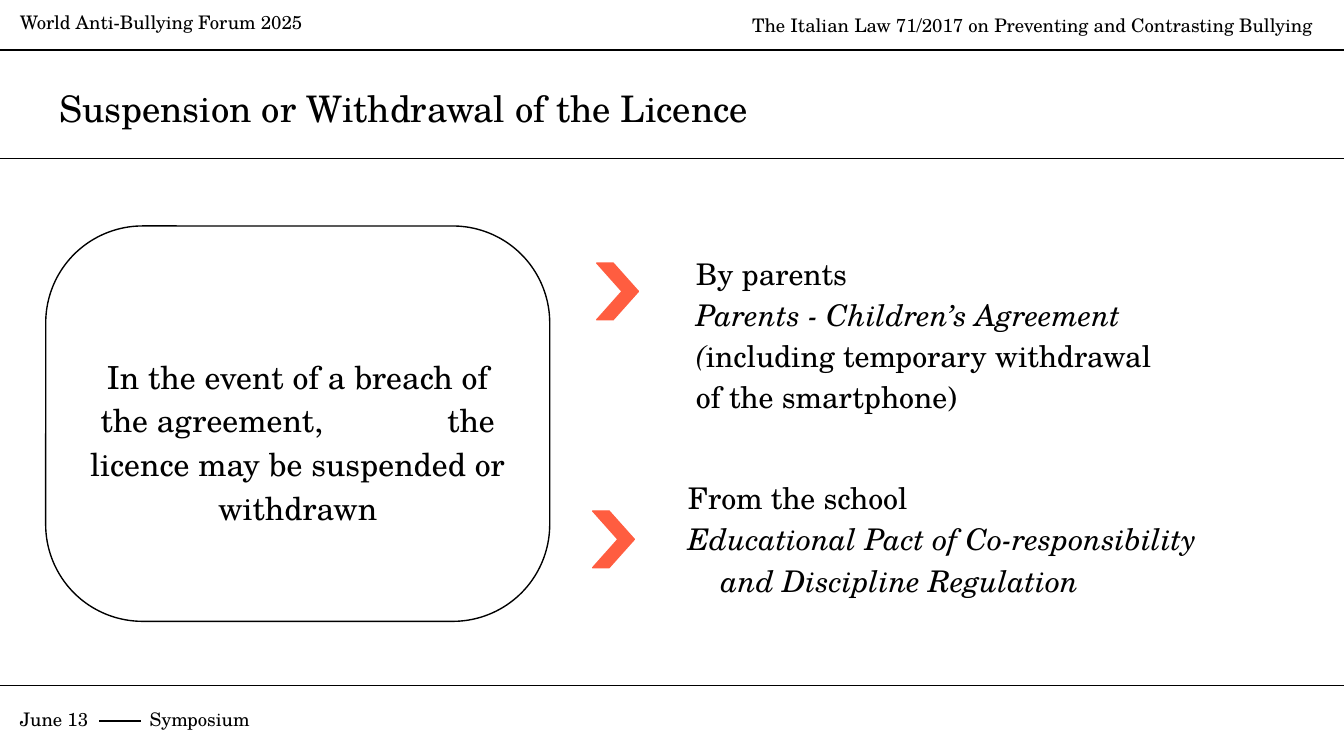
from lxml.etree import SubElement
from pptx import Presentation
from pptx.dml.color import RGBColor
from pptx.enum.shapes import MSO_CONNECTOR, MSO_SHAPE
from pptx.enum.text import MSO_ANCHOR, MSO_AUTO_SIZE, PP_ALIGN
from pptx.oxml.ns import qn
from pptx.util import Inches, Pt

BLACK = RGBColor(0x00, 0x00, 0x00)
CORAL = RGBColor(0xFF, 0x5D, 0x40)
FONT = "TeX Gyre Schola"
WIDTH = Inches(10)
HEIGHT = WIDTH * 9 // 16
COLUMN, ROW = WIDTH / 100, HEIGHT / 100
FRAME = {
    "word_wrap": True,
    "auto_size": MSO_AUTO_SIZE.NONE,
    "vertical_anchor": MSO_ANCHOR.TOP,
    "margin_left": Inches(0.1),
    "margin_top": Inches(0.1),
    "margin_right": Inches(0.1),
    "margin_bottom": Inches(0.1),
}


def apply_format(target, values):
    """Set every attribute named in a dict of format values."""
    for name, value in values.items():
        setattr(target, name, value)


def grid(left, top, width, height):
    """Turn columns and rows into slide lengths."""
    return [round(n) for n in (left * COLUMN, top * ROW, width * COLUMN, height * ROW)]


def write(shape, lines, size, para_format=None, frame_format=None):
    """Write lines, each a list of (text, italic) spans, one per paragraph."""
    frame = shape.text_frame
    apply_format(frame, FRAME | (frame_format or {}))
    for number, spans in enumerate(lines):
        para = frame.add_paragraph() if number else frame.paragraphs[0]
        apply_format(para, {"alignment": PP_ALIGN.LEFT} | (para_format or {}))
        for text, italic in spans:
            span = para.add_run()
            span.text = text
            apply_format(span.font, {"name": FONT, "size": Pt(size), "italic": italic})
            span.font.color.rgb = BLACK
    return frame.paragraphs


def add_tab(para, columns):
    """Give a paragraph one left tab stop, measured in grid columns."""
    stops = SubElement(para._p.get_or_add_pPr(), qn("a:tabLst"))
    SubElement(stops, qn("a:tab"), pos=str(round(columns * COLUMN)), algn="l")


def add_text(page, box, lines, size, para_format=None):
    """Add a text box with its lines."""
    return write(page.shapes.add_textbox(*grid(*box)), lines, size, para_format)


def add_rule(page, left, top, width):
    """Draw a thin horizontal rule."""
    x, y, length, _ = grid(left, top, width, 0)
    rule = page.shapes.add_connector(MSO_CONNECTOR.STRAIGHT, x, y, x + length, y)
    rule.line.color.rgb = BLACK
    rule.line.width = Pt(0.75)
    SubElement(rule._element.spPr, qn("a:effectLst"))


def add_outlined(page, kind, box, adjustment, line, fill=None):
    """Add a preset shape with a thin outline and an optional fill."""
    shape = page.shapes.add_shape(kind, *grid(*box))
    shape.adjustments[0] = adjustment
    shape.shadow.inherit = False
    shape.line.color.rgb = line
    shape.line.width = Pt(0.75)
    if fill is None:
        shape.fill.background()
    else:
        shape.fill.solid()
        shape.fill.fore_color.rgb = fill
    return shape


def add_header(page, box):
    """Place the forum name, the talk name and the rule below them."""
    left, top, width, height = box
    add_rule(page, left, top + height, width)
    add_text(page, (left + 0.5, top, 30.3, 2.8),
             [[("World Anti-Bullying Forum 2025", False)]], 10)
    add_text(page, (left + width - 48.6, top, 47.2, 2.8),
             [[("The Italian Law 71/2017 on Preventing and Contrasting Bullying", False)]], 10,
             {"alignment": PP_ALIGN.RIGHT, "line_spacing": 1.15})


def add_footer(page, box):
    """Place the date, a dash and the session type under a rule."""
    left, top, width, height = box
    add_rule(page, left, top, width)
    paras = add_text(page, (left + 0.5, top + 1.2, 21.7, 5.3),
                     [[("June 13\tSymposium", False)]], 10)
    add_tab(paras[0], 9.65)
    add_rule(page, left + 7.4, top + height / 2, 3.1)


def add_title(page, box):
    """Move and format the title placeholder and rule it off below."""
    title = page.shapes.title
    apply_format(title, dict(zip(("left", "top", "width", "height"), grid(*box))))
    write(title, [[("Suspension or Withdrawal of the Licence", False)]], 19.6)
    add_rule(page, 0, box[1] + box[3] - 0.2, 100)


def add_condition(page, box):
    """Place the rounded box that states when the licence is lost."""
    shape = add_outlined(page, MSO_SHAPE.ROUNDED_RECTANGLE, box, 0.245, BLACK)
    spans = ["In the event of a breach of the agreement,", " ",
             "the licence may be suspended or withdrawn"]
    paras = write(shape, [[(text, False) for text in spans]], 17,
                  {"alignment": PP_ALIGN.CENTER, "line_spacing": 1.15},
                  {"vertical_anchor": MSO_ANCHOR.MIDDLE,
                   "margin_top": Inches(0.23), "margin_bottom": 0})
    gap = paras[0].runs[1]
    gap.font._element.set("spc", "6170")


def add_authority(page, box, lead, drop, lines):
    """Place a chevron and, a lead to its right, the text it points to."""
    left, top, width, height = box
    paras = add_text(page, (left + lead, top, width - lead, height), lines, 16,
                     {"line_spacing": 1.15})
    add_outlined(page, MSO_SHAPE.CHEVRON, (left, top + drop, 3.1, 7.5), 0.607, CORAL, CORAL)
    return paras


def main():
    """Build the slide and save it."""
    deck = Presentation()
    apply_format(deck, {"slide_width": WIDTH, "slide_height": HEIGHT})
    page = deck.slides.add_slide(deck.slide_layouts[5])
    add_header(page, (0, 0, 100, 6.6))
    add_footer(page, (0, 90.7, 100, 9.3))
    add_title(page, (3.4, 9.55, 93.2, 11.6))
    add_condition(page, (3.4, 29.9, 37.5, 52.3))
    add_authority(page, (44.4, 31.3, 44.5, 14.6), 6.4, 3.5, [
        [("By parents", False)],
        [("Parents - Children’s Agreement (", True),
         ("including temporary withdrawal of the smartphone)", False)],
    ])
    school = add_authority(page, (44.1, 61, 51.3, 20.4), 6.1, 6.6, [
        [("From the school", False)],
        [("Educational Pact of Co-responsibility", True)],
        [("and Discipline Regulation", True)],
    ])
    school[2]._p.get_or_add_pPr().set("indent", str(round(2.45 * COLUMN)))
    deck.save("out.pptx")


if __name__ == "__main__":
    main()
